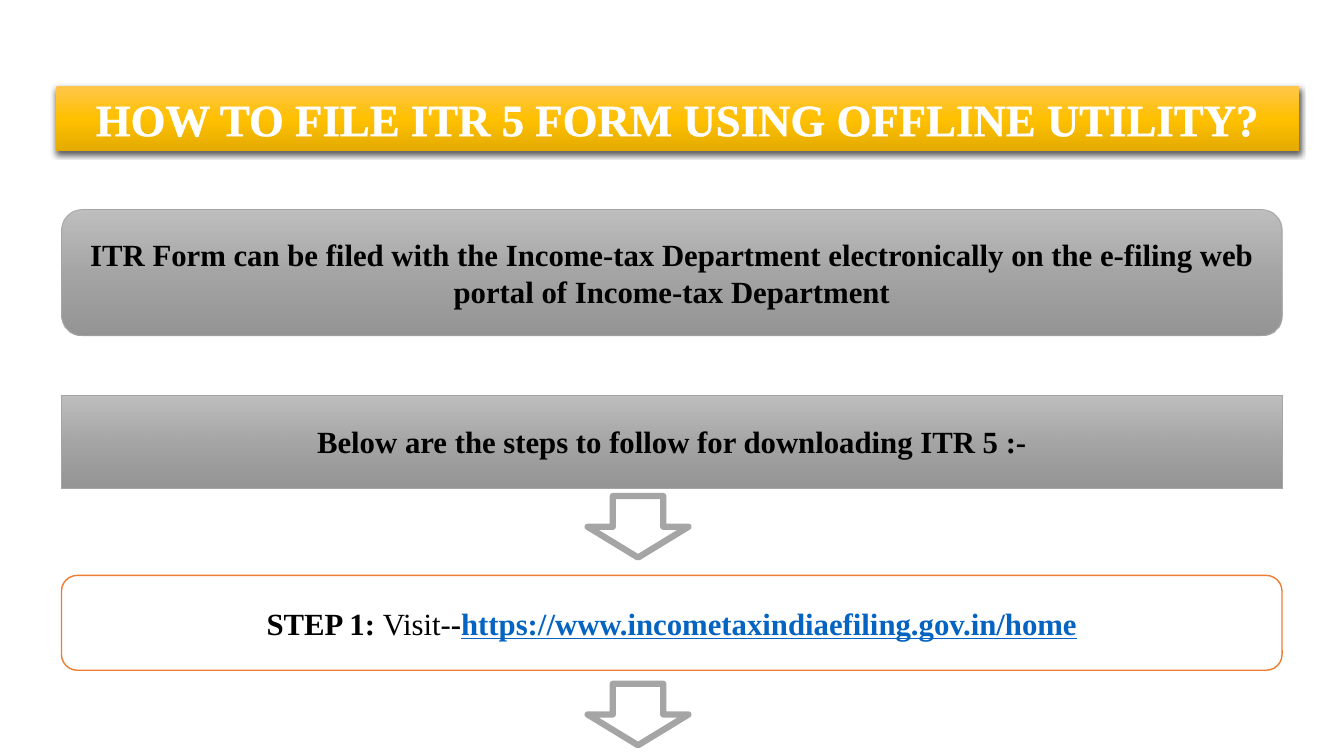
from lxml.etree import SubElement
from pptx import Presentation
from pptx.dml.color import RGBColor
from pptx.enum.shapes import MSO_SHAPE
from pptx.enum.text import MSO_ANCHOR, MSO_AUTO_SIZE, PP_ALIGN
from pptx.oxml.ns import qn
from pptx.util import Cm, Pt

GREY = [(0, "AFAFAF", 80), (50, "A5A5A5", 100), (100, "939393", 100)]
GOLD = [(0, "FFC64B", 100), (50, "FFC000", 100), (100, "E3AB00", 100)]
LEFT, WIDE = 1.55, 30.76


def color(code):
    return RGBColor.from_string(code)


def add(node, tag, **attrs):
    return SubElement(node, qn(tag), {k: str(v) for k, v in attrs.items()})


def tint(node, code, alpha=100):
    clr = add(node, "a:srgbClr", val=code)
    if alpha < 100:
        add(clr, "a:alpha", val=alpha * 1000)


def shade(shape, stops):
    """Fill from top to bottom through the given stops."""
    shape.fill.gradient()
    shape.fill.gradient_angle = 270
    rack = shape._element.spPr.find(qn("a:gradFill")).find(qn("a:gsLst"))
    for old in list(rack):
        rack.remove(old)
    for pos, code, alpha in stops:
        tint(add(rack, "a:gs", pos=pos * 1000), code, alpha)


def make(slide, kind, box, fill, line=None, width=0.5):
    shape = slide.shapes.add_shape(kind, *[Cm(v) for v in box])
    shape.shadow.inherit = False
    if isinstance(fill, str):
        shape.fill.solid()
        shape.fill.fore_color.rgb = color(fill)
    else:
        shade(shape, fill)
    if line:
        shape.line.color.rgb = color(line)
        shape.line.width = Pt(width)
    else:
        shape.line.fill.background()
    return shape


def write(shape, runs, size=22, anchor=MSO_ANCHOR.MIDDLE):
    """Write runs of (text, bold, colour, underline), centred."""
    frame = shape.text_frame
    frame.word_wrap = True
    frame.vertical_anchor = anchor
    para = frame.paragraphs[0]
    para.alignment = PP_ALIGN.CENTER
    for text, bold, code, under in runs:
        run = para.add_run()
        run.text = text
        font = run.font
        font.name = "Times New Roman"
        font.size = Pt(size)
        font.bold = bold
        font.color.rgb = color(code)
        if under:
            font.underline = True


def title(slide, box, text):
    bar = make(slide, MSO_SHAPE.RECTANGLE, box, GOLD)
    write(bar, [(text, True, "FFFFFF", False)], 32, MSO_ANCHOR.TOP)
    bar.text_frame.auto_size = MSO_AUTO_SIZE.SHAPE_TO_FIT_TEXT
    # Soft shadow below the bar
    glow = bar._element.spPr.find(qn("a:effectLst"))
    drop = add(glow, "a:outerShdw", blurRad=Pt(4.5), dist=Pt(1.5),
               dir=5400000, algn="ctr", rotWithShape=0)
    tint(drop, "000000", 63)
    # White outline on the letters
    props = bar.text_frame.paragraphs[0].runs[0].font._element
    edge = add(props, "a:ln", w=Pt(1.45))
    tint(add(edge, "a:solidFill"), "FFFFFF")
    props.insert(0, edge)


def panel(slide, kind, box, text):
    shape = make(slide, kind, box, GREY, "A5A5A5")
    write(shape, [(text, True, "000000", False)])


def step(slide, box, runs):
    shape = make(slide, MSO_SHAPE.ROUNDED_RECTANGLE, box, "FFFFFF", "ED7D31", 1)
    write(shape, runs)


def arrow(slide, box):
    make(slide, MSO_SHAPE.DOWN_ARROW, box, "FFFFFF", "A5A5A5", 4.5)


def main():
    deck = Presentation()
    deck.slide_width, deck.slide_height = Cm(33.87), Cm(19.05)
    slide = deck.slides.add_slide(deck.slide_layouts[6])

    # Heading and introduction
    title(slide, (1.42, 2.18, 31.32, 1.63),
          "HOW TO FILE ITR 5 FORM USING OFFLINE UTILITY?")
    panel(slide, MSO_SHAPE.ROUNDED_RECTANGLE, (LEFT, 5.28, WIDE, 3.18),
          "ITR Form can be filed with the Income-tax Department "
          "electronically on the e-filing web portal of Income-tax Department")
    panel(slide, MSO_SHAPE.RECTANGLE, (LEFT, 9.96, WIDE, 2.34),
          "Below are the steps to follow for downloading ITR 5 :-")

    # Steps, with an arrow before and after
    step(slide, (LEFT, 14.5, WIDE, 2.39), [
        ("STEP 1: ", True, "000000", False),
        ("Visit-", False, "000000", False),
        ("-", True, "000000", False),
        ("https://www.incometaxindiaefiling.gov.in/home", True, "0563C1", True),
    ])
    for top in (12.5, 17.23):
        arrow(slide, (14.81, top, 2.54, 1.55))

    deck.save("out.pptx")


if __name__ == "__main__":
    main()
